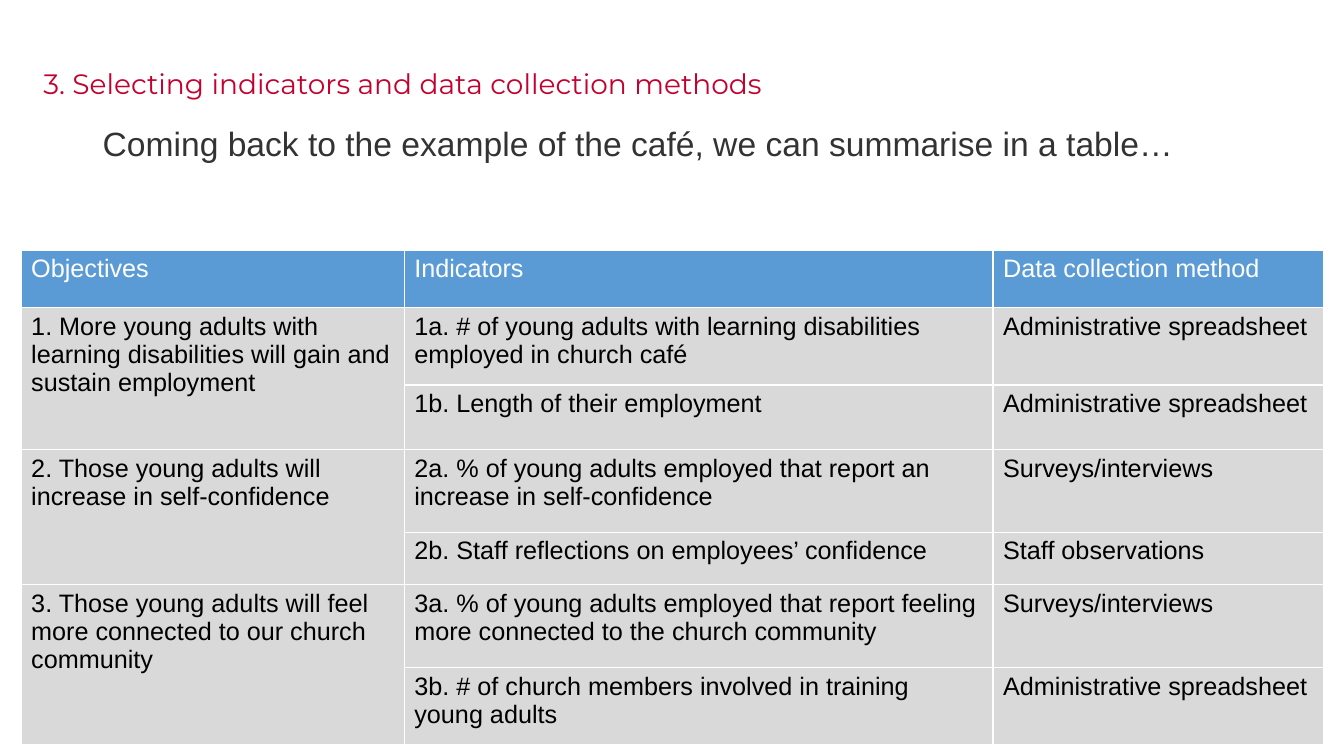
"""Build the slide that summarises objectives, indicators and data collection methods."""
from lxml import etree
from pptx import Presentation
from pptx.dml.color import RGBColor
from pptx.enum import text
from pptx.oxml import ns
from pptx.util import Emu, Pt

PX = 9144
WHITE = RGBColor(0xFF, 0xFF, 0xFF)
BLACK = RGBColor(0x00, 0x00, 0x00)
RED = RGBColor(0xC4, 0x00, 0x2F)
BLUE = RGBColor(0x5B, 0x9B, 0xD5)
GREY = RGBColor(0xD9, 0xD9, 0xD9)
DARK = RGBColor(0x33, 0x33, 0x33)

TITLE = "3. Selecting indicators and data collection methods"
INTRO = "Coming back to the example of the café, we can summarise in a table…"
HEADER = ("Objectives", "Indicators", "Data collection method")
OBJECTIVES = [
    ("1. More young adults with learning disabilities will gain and sustain employment", [
        ("1a. # of young adults with learning disabilities employed in church café",
         "Administrative spreadsheet"),
        ("1b. Length of their employment", "Administrative spreadsheet")]),
    ("2. Those young adults will increase in self-confidence", [
        ("2a. % of young adults employed that report an increase in self-confidence",
         "Surveys/interviews"),
        ("2b. Staff reflections on employees’ confidence", "Staff observations")]),
    ("3. Those young adults will feel more connected to our church community", [
        ("3a. % of young adults employed that report feeling more connected to the church community",
         "Surveys/interviews"),
        ("3b. # of church members involved in training young adults",
         "Administrative spreadsheet")]),
]

SLIDE_SIZE = (1333, 750)
TITLE_BOX = (33, 12, 1259, 145)
INTRO_BOX = (92, 122, 1150, 505)
TABLE_AT = (21, 248)
COLS = (380, 584, 328)
ROWS = (57, 77, 64, 82, 52, 82, 77)

TITLE_FONT = {"name": "Montserrat", "size": Pt(20), "bold": False}
INTRO_FONT = {"name": "Arial", "size": Pt(24)}
CELL_FONT = {"name": "Arial", "size": Pt(18), "bold": False}
FRAME = {"word_wrap": True, "auto_size": text.MSO_AUTO_SIZE.NONE}


def px(values):
    """Turn px lengths into EMU."""
    return [Emu(v * PX) for v in values]


def style(obj, values):
    """Set each attribute in values on obj."""
    for name, value in values.items():
        setattr(obj, name, value)


def write(tf, words, font, color, **para):
    """Put one formatted paragraph into a text frame."""
    p = tf.paragraphs[0]
    style(p, para)
    r = p.add_run()
    r.text = words
    style(r.font, font)
    r.font.color.rgb = color


def fill_cell(cell, words, color, fill):
    """Write a table cell with its fill and thin white borders."""
    write(cell.text_frame, words, CELL_FONT, color)
    cell.fill.solid()
    cell.fill.fore_color.rgb = fill
    props = cell._tc.get_or_add_tcPr()
    for i, side in enumerate(("lnL", "lnR", "lnT", "lnB")):
        ln = etree.Element(ns.qn(f"a:{side}"), w=str(Pt(1)))
        solid = etree.SubElement(ln, ns.qn("a:solidFill"))
        etree.SubElement(solid, ns.qn("a:srgbClr"), val=str(WHITE))
        props.insert(i, ln)


def add_table(slide):
    """Add the table with one merged cell for each objective."""
    size = (sum(COLS), sum(ROWS))
    table = slide.shapes.add_table(len(ROWS), len(COLS), *px(TABLE_AT + size)).table
    for col, width in zip(table.columns, px(COLS)):
        col.width = width
    for row, height in zip(table.rows, px(ROWS)):
        row.height = height
    lines = [HEADER]
    for objective, indicators in OBJECTIVES:
        first = len(lines)
        for i, pair in enumerate(indicators):
            lines.append(("" if i else objective, *pair))
        table.cell(first, 0).merge(table.cell(len(lines) - 1, 0))
    for r, line in enumerate(lines):
        color, fill = (BLACK, GREY) if r else (WHITE, BLUE)
        for c, words in enumerate(line):
            fill_cell(table.cell(r, c), words, color, fill)


def main():
    """Build and save the slide."""
    prs = Presentation()
    prs.slide_width, prs.slide_height = px(SLIDE_SIZE)
    slide = prs.slides.add_slide(prs.slide_layouts[5])
    title = slide.shapes.title
    style(title, dict(zip(("left", "top", "width", "height"), px(TITLE_BOX))))
    style(title.text_frame, {**FRAME, "vertical_anchor": text.MSO_ANCHOR.MIDDLE})
    write(title.text_frame, TITLE, TITLE_FONT, RED,
          alignment=text.PP_ALIGN.LEFT, line_spacing=0.9)
    add_table(slide)
    intro = slide.shapes.add_textbox(*px(INTRO_BOX))
    style(intro.text_frame, FRAME)
    write(intro.text_frame, INTRO, INTRO_FONT, DARK, line_spacing=0.9)
    prs.save("out.pptx")


if __name__ == "__main__":
    main()
